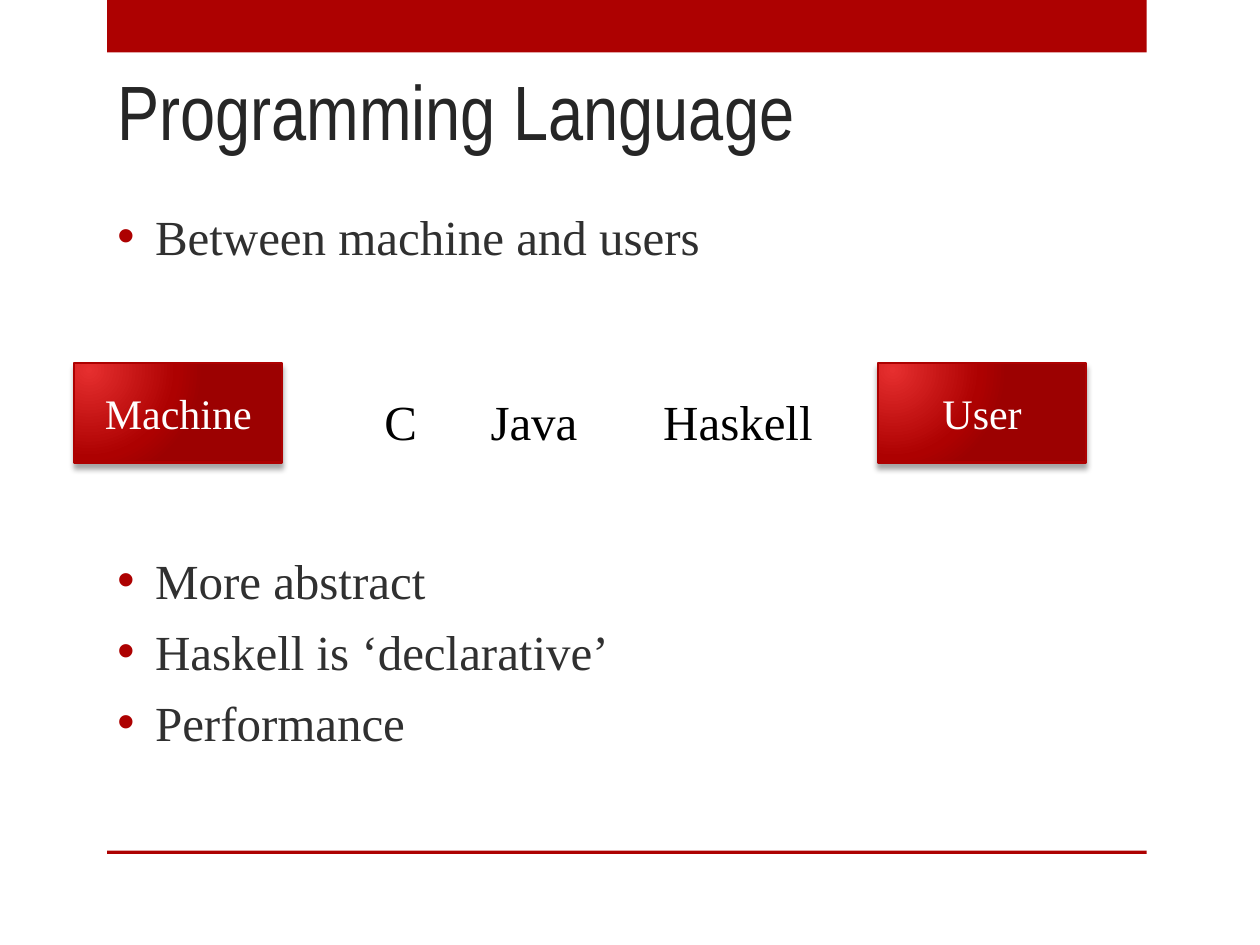
from lxml.etree import SubElement
from pptx import Presentation
from pptx.dml.color import RGBColor
from pptx.enum.shapes import MSO_SHAPE as Shape
from pptx.enum.text import MSO_ANCHOR as Anchor, PP_ALIGN as Align
from pptx.oxml import parse_xml
from pptx.oxml.ns import nsdecls, qn
from pptx.util import Pt

COLORS = {
    "red": "AD0101",
    "light_red": "E62F2F",
    "dark_red": "9C0101",
    "title": "262626",
    "body": "303030",
    "black": "000000",
    "white": "FFFFFF",
}
SERIF = "Times New Roman"
FRAME = {"word_wrap": True, "margin_left": 0, "margin_right": 0,
         "margin_top": 0, "margin_bottom": 0}
TITLE_FONT = {"name": "Arial Narrow", "size": Pt(44)}
BODY_FONT = {"name": SERIF, "size": Pt(28)}
BOX_FONT = {"name": SERIF, "size": Pt(24)}


def set_values(target, values):
    for name, value in values.items():
        setattr(target, name, value)


def rgb(color):
    return RGBColor.from_string(COLORS[color])


def write(paragraph, text, font, color):
    run = paragraph.add_run()
    run.text = text
    set_values(run.font, font)
    run.font.color.rgb = rgb(color)


def add_text(slide, box, text, font, color, **frame_values):
    """Add a one-paragraph text box and return its paragraph."""
    frame = slide.shapes.add_textbox(*map(Pt, box)).text_frame
    set_values(frame, FRAME | frame_values)
    write(frame.paragraphs[0], text, font, color)
    return frame.paragraphs[0]


def add_bar(slide, top, height):
    bar = slide.shapes.add_shape(
        Shape.RECTANGLE, Pt(61.2), Pt(top), Pt(594), Pt(height))
    bar.shadow.inherit = False
    bar.fill.solid()
    bar.fill.fore_color.rgb = rgb("red")
    bar.line.fill.background()


def add_bullets(slide, top, items):
    frame = slide.shapes.add_textbox(
        Pt(67), Pt(top), Pt(580), Pt(39.1 * len(items))).text_frame
    set_values(frame, FRAME)
    for index, item in enumerate(items):
        paragraph = frame.paragraphs[0] if index == 0 else frame.add_paragraph()
        paragraph.space_after = Pt(6.9)
        write(paragraph, item, BODY_FONT, "body")
        properties = paragraph._p.get_or_add_pPr()
        properties.set("marL", str(Pt(21.6)))
        properties.set("indent", str(-Pt(21.6)))
        color = SubElement(properties, qn("a:buClr"))
        SubElement(color, qn("a:srgbClr"), val=COLORS["red"])
        SubElement(properties, qn("a:buFont"), typeface="Arial")
        SubElement(properties, qn("a:buChar"), char="•")


def add_glossy_box(slide, left, label):
    """Add a labelled box with a radial gradient and a soft shadow."""
    box = slide.shapes.add_shape(
        Shape.RECTANGLE, Pt(left), Pt(207.4), Pt(118.8), Pt(56.9))
    box.line.color.rgb = rgb("red")
    box.line.width = Pt(1.25)
    stops = "".join(
        f'<a:gs pos="{percent * 1000}"><a:srgbClr val="{COLORS[color]}"/></a:gs>'
        for percent, color in ((0, "light_red"), (76, "red"), (100, "dark_red")))
    properties = box._element.spPr
    properties.find(qn("a:ln")).addprevious(parse_xml(
        f'<a:gradFill {nsdecls("a")} rotWithShape="1"><a:gsLst>{stops}</a:gsLst>'
        '<a:path path="circle"><a:fillToRect l="15000" t="15000" '
        'r="100000" b="100000"/></a:path></a:gradFill>'))
    properties.append(parse_xml(
        f'<a:effectLst {nsdecls("a")}><a:outerShdw blurRad="{Pt(3)}" '
        f'dist="{Pt(3)}" dir="5400000" rotWithShape="0">'
        f'<a:srgbClr val="{COLORS["black"]}"><a:alpha val="35000"/></a:srgbClr>'
        '</a:outerShdw></a:effectLst>'))
    box.text_frame.vertical_anchor = Anchor.MIDDLE
    paragraph = box.text_frame.paragraphs[0]
    paragraph.alignment = Align.CENTER
    write(paragraph, label, BOX_FONT, "white")


def add_languages(slide):
    paragraph = add_text(slide, (219.6, 223.7, 248, 33),
                         "C\tJava\tHaskell", BODY_FONT, "black")
    tabs = SubElement(paragraph._p.get_or_add_pPr(), qn("a:tabLst"))
    for position in (60.7, 159.4):
        SubElement(tabs, qn("a:tab"), pos=str(Pt(position)), algn="l")


def main():
    presentation = Presentation()
    presentation.slide_width, presentation.slide_height = Pt(720), Pt(540)
    slide = presentation.slides.add_slide(presentation.slide_layouts[6])
    add_bar(slide, 0, 30)
    add_bar(slide, 486, 2)
    add_text(slide, (67, 31.7, 585.4, 62.6), "Programming Language",
             TITLE_FONT, "title", vertical_anchor=Anchor.MIDDLE)
    add_bullets(slide, 118, ["Between machine and users"])
    add_bullets(slide, 314.5,
                ["More abstract", "Haskell is ‘declarative’", "Performance"])
    add_glossy_box(slide, 42.5, "Machine")
    add_glossy_box(slide, 501.8, "User")
    add_languages(slide)
    presentation.save("out.pptx")


if __name__ == "__main__":
    main()
